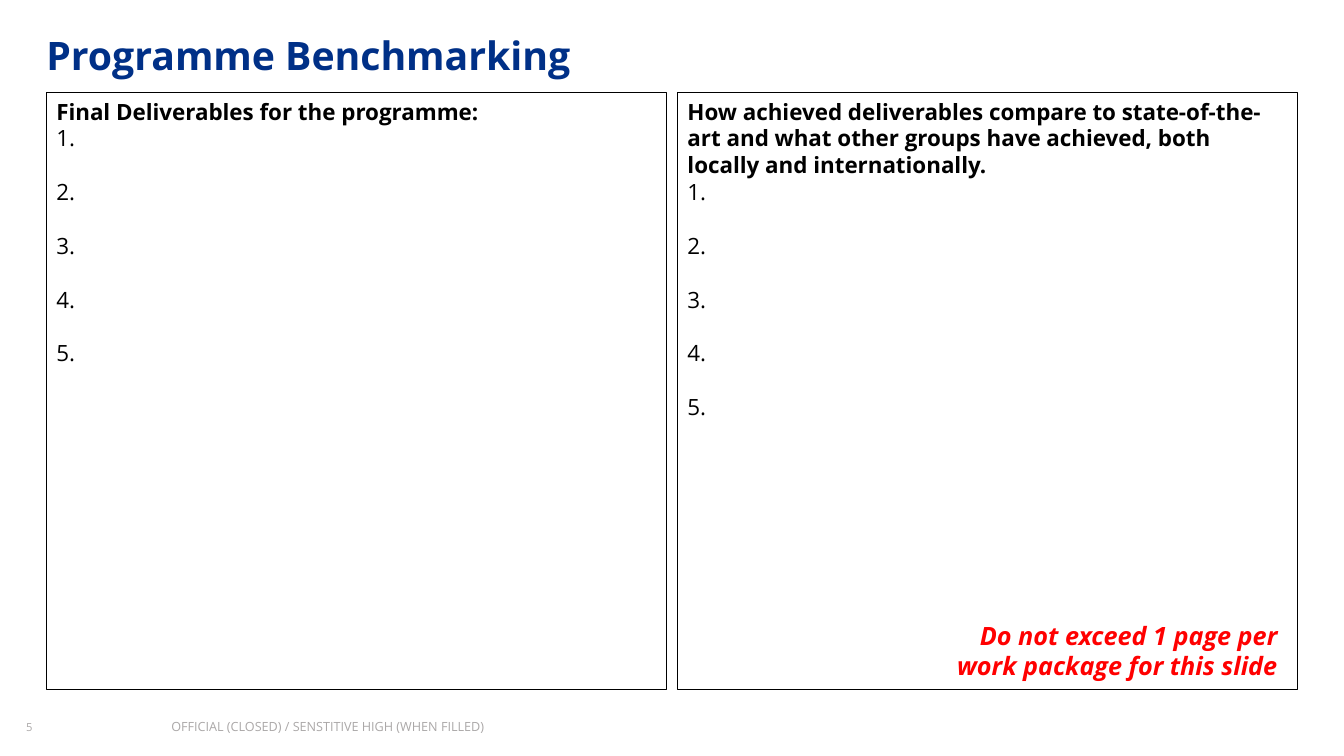
from pptx import Presentation
from pptx.dml.color import RGBColor
from pptx.enum.shapes import MSO_SHAPE
from pptx.enum.text import MSO_ANCHOR, MSO_AUTO_SIZE, PP_ALIGN
from pptx.util import Emu, Pt

LEFT, RIGHT = PP_ALIGN.LEFT, PP_ALIGN.RIGHT
TOP = MSO_ANCHOR.TOP
NO_FIT = MSO_AUTO_SIZE.NONE
RECT = MSO_SHAPE.RECTANGLE
TITLE_ONLY = 5

FONT = "Open Sans"
NAVY, BLACK, RED, GREY = "003087", "000000", "FF0000", "ABA8A8"

PANEL_LEFT, PANEL_TOP, PANEL_W, PANEL_H, PANEL_GAP = 46, 92, 615, 592, 11
ITEM_COUNT = 5
HEADINGS = [
    "Final Deliverables for the programme:",
    "How achieved deliverables compare to state-of-the-art and what other "
    "groups have achieved, both locally and internationally.",
]


def px(n):
    """Length in EMU, at 100 px to the inch."""
    return Emu(n * 9144)


def rgb(color):
    return RGBColor.from_string(color)


def write(p, text, size=16, color=BLACK, bold=False, italic=False,
          align=LEFT, before=0, spacing=1.0):
    p.alignment = align
    p.space_before = Pt(before)
    p.line_spacing = spacing
    r = p.add_run()
    r.text = text
    font = r.font
    font.name, font.size = FONT, Pt(size)
    font.bold, font.italic = bold, italic
    font.color.rgb = rgb(color)


def set_frame(sp, x_inset=0, y_inset=0):
    tf = sp.text_frame
    tf.word_wrap = True
    tf.auto_size = NO_FIT
    tf.vertical_anchor = TOP
    tf.margin_left = tf.margin_right = px(x_inset)
    tf.margin_top = tf.margin_bottom = px(y_inset)
    return tf


def add_title(s, text):
    sp = s.shapes.title
    sp.left, sp.top, sp.width, sp.height = px(46), px(26), px(1194), px(52)
    tf = set_frame(sp)
    write(tf.paragraphs[0], text, size=28, color=NAVY, bold=True, spacing=1.1)


def add_panel(s, x, heading):
    sp = s.shapes.add_shape(RECT, px(x), px(PANEL_TOP), px(PANEL_W), px(PANEL_H))
    sp.shadow.inherit = False
    sp.fill.background()
    sp.line.color.rgb = rgb(BLACK)
    sp.line.width = Pt(0.75)
    tf = set_frame(sp, 10, 5)
    write(tf.paragraphs[0], heading, bold=True)
    for number in range(1, ITEM_COUNT + 1):
        write(tf.add_paragraph(), f"{number}.", before=0 if number == 1 else 19.2)


def add_text(s, x, y, w, h, text, x_inset=0, y_inset=0, **fmt):
    sp = s.shapes.add_textbox(px(x), px(y), px(w), px(h))
    tf = set_frame(sp, x_inset, y_inset)
    write(tf.paragraphs[0], text, **fmt)


def main():
    prs = Presentation()
    prs.slide_width, prs.slide_height = px(1333), px(750)
    s = prs.slides.add_slide(prs.slide_layouts[TITLE_ONLY])

    add_title(s, "Programme Benchmarking")
    for i, heading in enumerate(HEADINGS):
        add_panel(s, PANEL_LEFT + i * (PANEL_W + PANEL_GAP), heading)
    add_text(s, 937, 610, 340, 71,
             "Do not exceed 1 page per work package for this slide",
             x_inset=10, y_inset=5, size=18, color=RED, bold=True,
             italic=True, align=RIGHT)
    add_text(s, 26, 713, 79, 19, "5", size=8, color=GREY, spacing=1.1)
    add_text(s, 170, 713, 533, 19,
             "OFFICIAL (CLOSED) / SENSTITIVE HIGH (WHEN FILLED)",
             size=9, color=GREY)

    prs.save("out.pptx")


if __name__ == "__main__":
    main()
